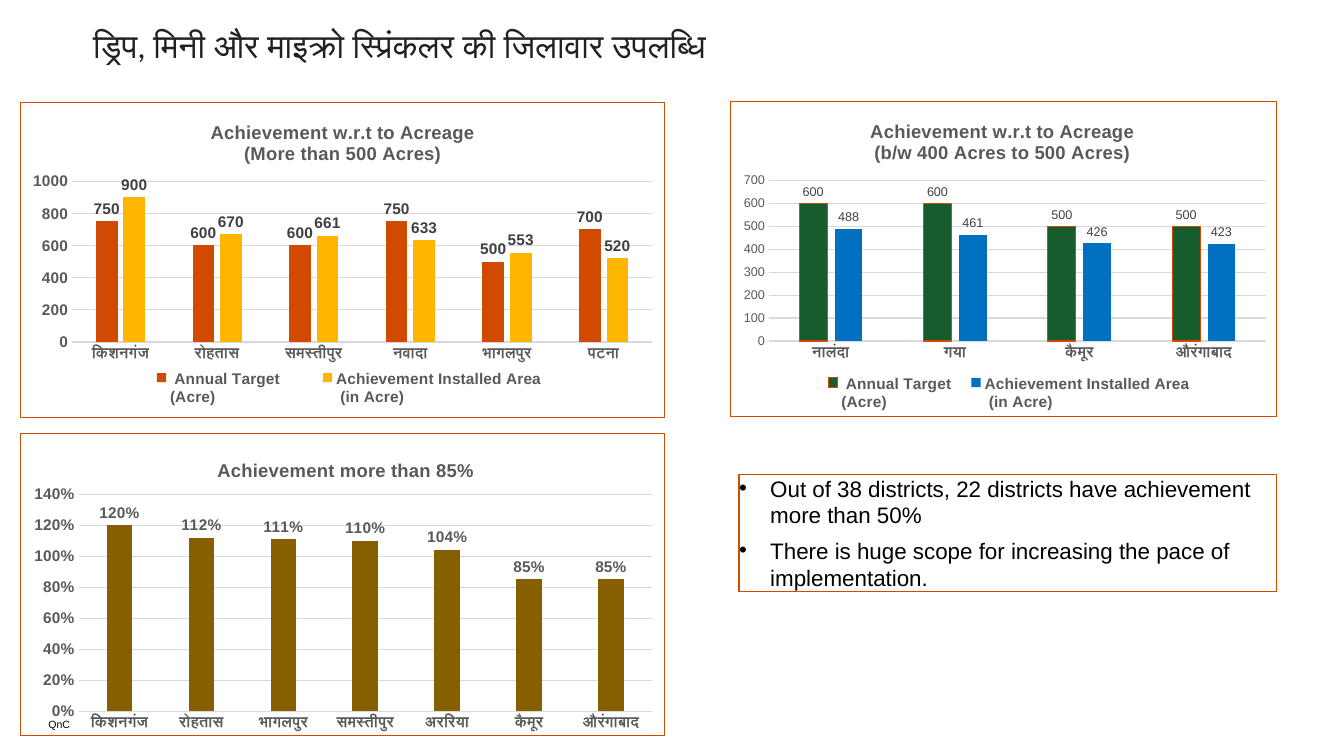
"""Build the slide on district-wise drip and sprinkler achievement."""
from lxml import etree
from pptx import Presentation
from pptx import util as u
from pptx.chart.data import CategoryChartData
from pptx.dml.color import RGBColor
from pptx.enum import chart as kinds, shapes, text
from pptx.oxml import parse_xml
from pptx.oxml.ns import nsdecls, qn

ORANGE, GREY, DARK, PALE, BLACK = "D04A02", "595959", "404040", "D9D9D9", "000000"
HEADING = "ड्रिप, मिनी और माइक्रो स्प्रिंकलर की जिलावार उपलब्धि "
FOOTER = "QnC"
POINTS = ["Out of 38 districts, 22 districts have achievement more than 50%",
          "There is huge scope for increasing the pace of implementation."]
TARGET = " Annual Target \n(Acre) "
INSTALLED = "Achievement Installed Area\n (in Acre)"

CHARTS = [
    {"at": (0.2, 1.01, 6.4, 3.14),
     "title": ["Achievement w.r.t to Acreage ", "(More than 500 Acres) "],
     "districts": ["किशनगंज", "रोहतास", "समस्तीपुर", "नवादा", "भागलपुर", "पटना"],
     "series": [(TARGET, [750, 600, 600, 750, 500, 700], ORANGE, None),
                (INSTALLED, [900, 670, 661, 633, 553, 520], "FFB600", None)],
     "format": "0", "scale": (1000, 200), "small": (11, True), "label_color": DARK,
     "title_at": (0.29, 0.05), "plot_at": (0.08, 0.25, 0.9, 0.51),
     "legend_at": (0.16, 0.84, 0.7, 0.13)},
    {"at": (7.24, 1, 5.43, 3.14),
     "title": ["Achievement w.r.t to Acreage ", "(b/w 400 Acres to 500 Acres) "],
     "districts": ["नालंदा", "गया", "कैमूर", "औरंगाबाद"],
     "series": [(TARGET, [600, 600, 500, 500], "175C2C", ORANGE),
                (INSTALLED, [488, 461, 426, 423], "0070C0", None)],
     "format": "0", "scale": (700, 100), "small": (9, False), "label_color": DARK,
     "title_at": (0.25, 0.05), "plot_at": (0.07, 0.25, 0.91, 0.51),
     "legend_at": (0.16, 0.87, 0.7, 0.13)},
    {"at": (0.2, 4.3, 6.4, 3),
     "title": ["Achievement more than 85%"],
     "districts": ["किशनगंज", "रोहतास", "भागलपुर", "समस्तीपुर", "अररिया", "कैमूर", "औरंगाबाद"],
     "series": [("Series 1", [1.2, 1.12, 1.11, 1.1, 1.04, 0.85, 0.85], "855F00", None)],
     "format": "0%", "scale": (1.4, 0.2), "small": (11, True), "label_color": GREY,
     "title_at": (0.3, 0.07), "plot_at": (0.09, 0.2, 0.89, 0.72), "legend_at": None},
]


def color(value):
    return RGBColor.from_string(value)


def style(font, size, shade, bold=False, name="Arial"):
    font.size, font.bold, font.name = u.Pt(size), bold, name
    font.color.rgb = color(shade)


def outline(line, shade):
    line.color.rgb = color(shade)
    line.width = u.Pt(0.75)


def place(element, index, spots, inner=False):
    for old in element.findall(qn("c:layout")):
        element.remove(old)
    layout = parse_xml(f"<c:layout {nsdecls('c')}><c:manualLayout/></c:layout>")
    settings = [("layoutTarget", "inner")] if inner else []
    settings += [("xMode", "edge"), ("yMode", "edge")] + list(zip("xywh", spots))
    for tag, value in settings:
        etree.SubElement(layout[0], qn("c:" + tag)).set("val", str(value))
    element.insert(index, layout)


def add_bars(page, item):
    data = CategoryChartData(number_format=item["format"])
    data.categories = item["districts"]
    for name, values, _, _ in item["series"]:
        data.add_series(name, values)
    chart = page.shapes.add_chart(kinds.XL_CHART_TYPE.COLUMN_CLUSTERED,
                                  *map(u.Inches, item["at"]), data).chart
    style(chart.font, 11, GREY, True)
    size, bold = item["small"]

    frame = chart.chart_title.text_frame
    for index, words in enumerate(item["title"]):
        para = frame.add_paragraph() if index else frame.paragraphs[0]
        span = para.add_run()
        span.text = words
        style(span.font, 13.2, GREY, True)
    chart.chart_title.include_in_layout = False
    place(chart.chart_title._element, 1, item["title_at"])

    plot = chart.plots[0]
    plot.gap_width, plot.overlap, plot.vary_by_categories = 219, -27, False
    for series, (_, _, fill, edge) in zip(plot.series, item["series"]):
        series.format.fill.solid()
        series.format.fill.fore_color.rgb = color(fill)
        if edge:
            outline(series.format.line, edge)
        labels = series.data_labels
        labels.show_value = True
        labels.number_format, labels.number_format_is_linked = item["format"], False
        labels.position = kinds.XL_LABEL_POSITION.OUTSIDE_END
        style(labels.font, size, item["label_color"], bold)

    across, up = chart.category_axis, chart.value_axis
    for axis in (across, up):
        axis.major_tick_mark = axis.minor_tick_mark = kinds.XL_TICK_MARK.NONE
    style(across.tick_labels.font, 11, GREY, True)
    style(up.tick_labels.font, size, GREY, bold)
    outline(across.format.line, PALE)
    up.format.line.fill.background()
    outline(up.major_gridlines.format.line, PALE)
    up.minimum_scale = 0
    up.maximum_scale, up.major_unit = item["scale"]
    up.tick_labels.number_format = item["format"]
    up.tick_labels.number_format_is_linked = False

    chart.has_legend = item["legend_at"] is not None
    if chart.has_legend:
        chart.legend.position = kinds.XL_LEGEND_POSITION.BOTTOM
        chart.legend.include_in_layout = False
        style(chart.legend.font, 11, GREY, True)
        place(chart.legend._element, 1, item["legend_at"])

    space = chart.element
    place(space.find(".//" + qn("c:plotArea")), 0, item["plot_at"], True)
    space.find(qn("c:chart")).addnext(parse_xml(
        f'<c:spPr {nsdecls("c", "a")}><a:noFill/><a:ln w="9525"><a:solidFill>'
        f'<a:srgbClr val="{ORANGE}"/></a:solidFill></a:ln></c:spPr>'))


def add_words(box, lines, size, shade, name="Arial", margin=True):
    frame = box.text_frame
    frame.word_wrap = True
    if not margin:
        frame.margin_left = frame.margin_right = frame.margin_top = frame.margin_bottom = 0
    for index, words in enumerate(lines):
        para = frame.add_paragraph() if index else frame.paragraphs[0]
        span = para.add_run()
        span.text = words
        style(span.font, size, shade, name=name)
    return frame


def main():
    deck = Presentation()
    deck.slide_width, deck.slide_height = u.Inches(13.33), u.Inches(7.5)
    page = deck.slides.add_slide(deck.slide_layouts[6])

    footer = page.shapes.add_textbox(*map(u.Inches, (0.48, 7.1, 5.99, 0.15)))
    frame = add_words(footer, [FOOTER], 7.5, BLACK, margin=False)
    frame.vertical_anchor = text.MSO_ANCHOR.BOTTOM

    for item in CHARTS:
        add_bars(page, item)

    box = page.shapes.add_shape(shapes.MSO_SHAPE.RECTANGLE,
                                *map(u.Inches, (7.33, 4.71, 5.33, 1.16)))
    box.shadow.inherit = False
    box.fill.background()
    outline(box.line, ORANGE)
    frame = add_words(box, POINTS, 16, BLACK, margin=False)
    frame.vertical_anchor = text.MSO_ANCHOR.TOP
    for para in frame.paragraphs:
        para.alignment = text.PP_ALIGN.LEFT
        para.space_after = u.Pt(6)
        props = para._p.get_or_add_pPr()
        props.set("marL", str(u.Inches(0.31)))
        props.set("indent", str(-u.Inches(0.31)))
        etree.SubElement(props, qn("a:buFont")).set("typeface", "Arial")
        etree.SubElement(props, qn("a:buChar")).set("char", "•")

    heading = page.shapes.add_textbox(*map(u.Inches, (0.67, 0.2, 6.67, 0.91)))
    frame = add_words(heading, [HEADING], 24, "202124", "Calibri")
    frame.paragraphs[0].alignment = text.PP_ALIGN.CENTER

    deck.save("out.pptx")


if __name__ == "__main__":
    main()
